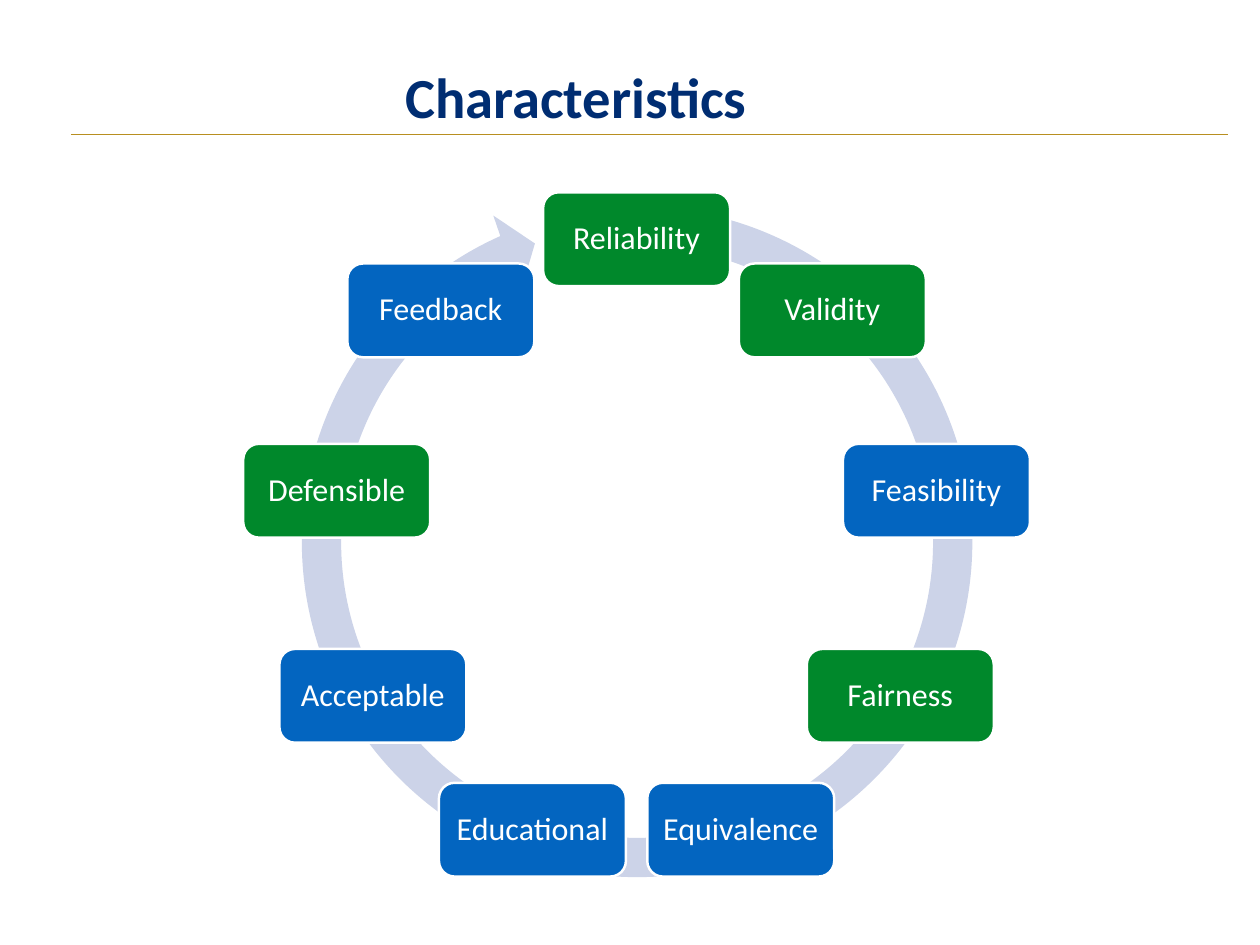
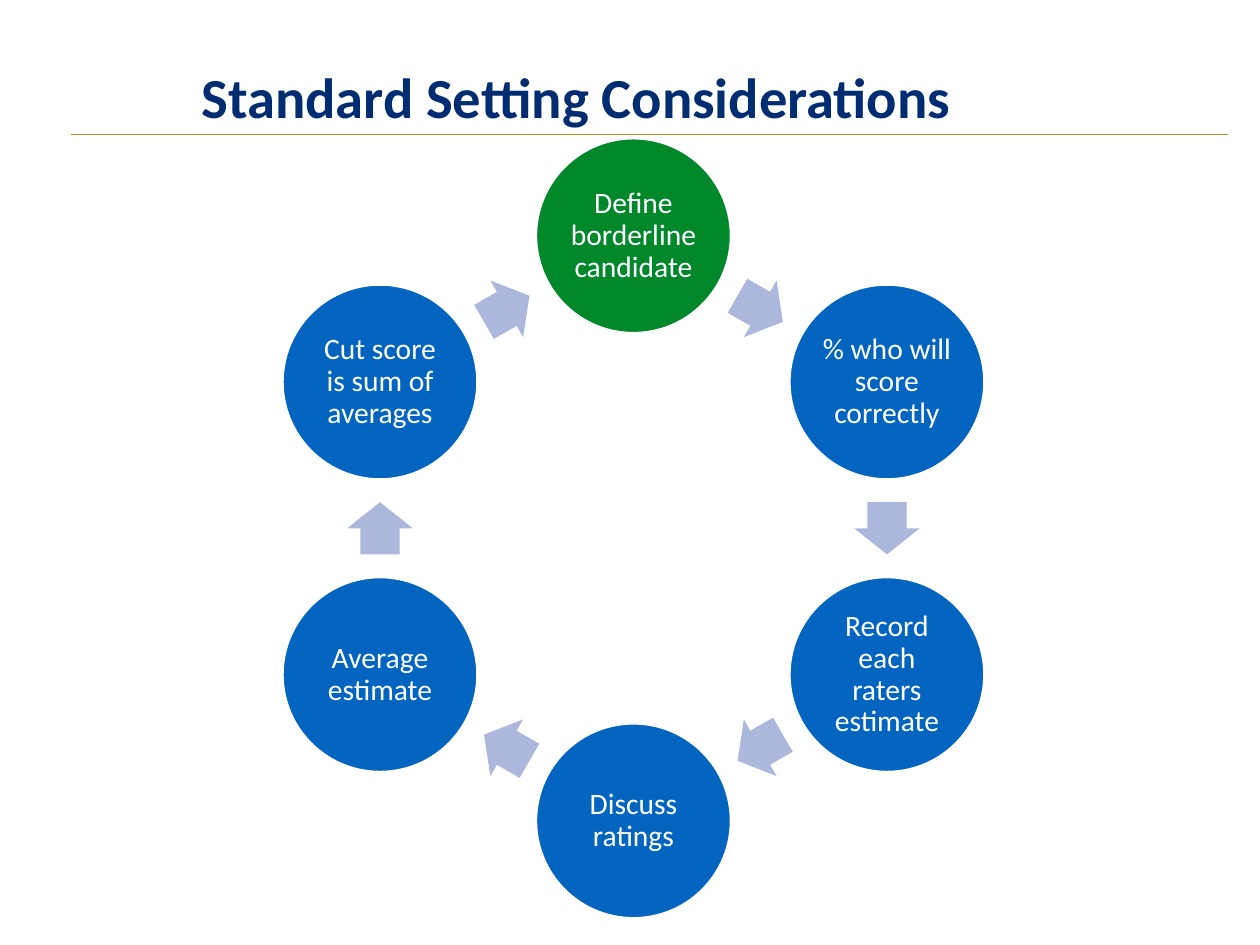
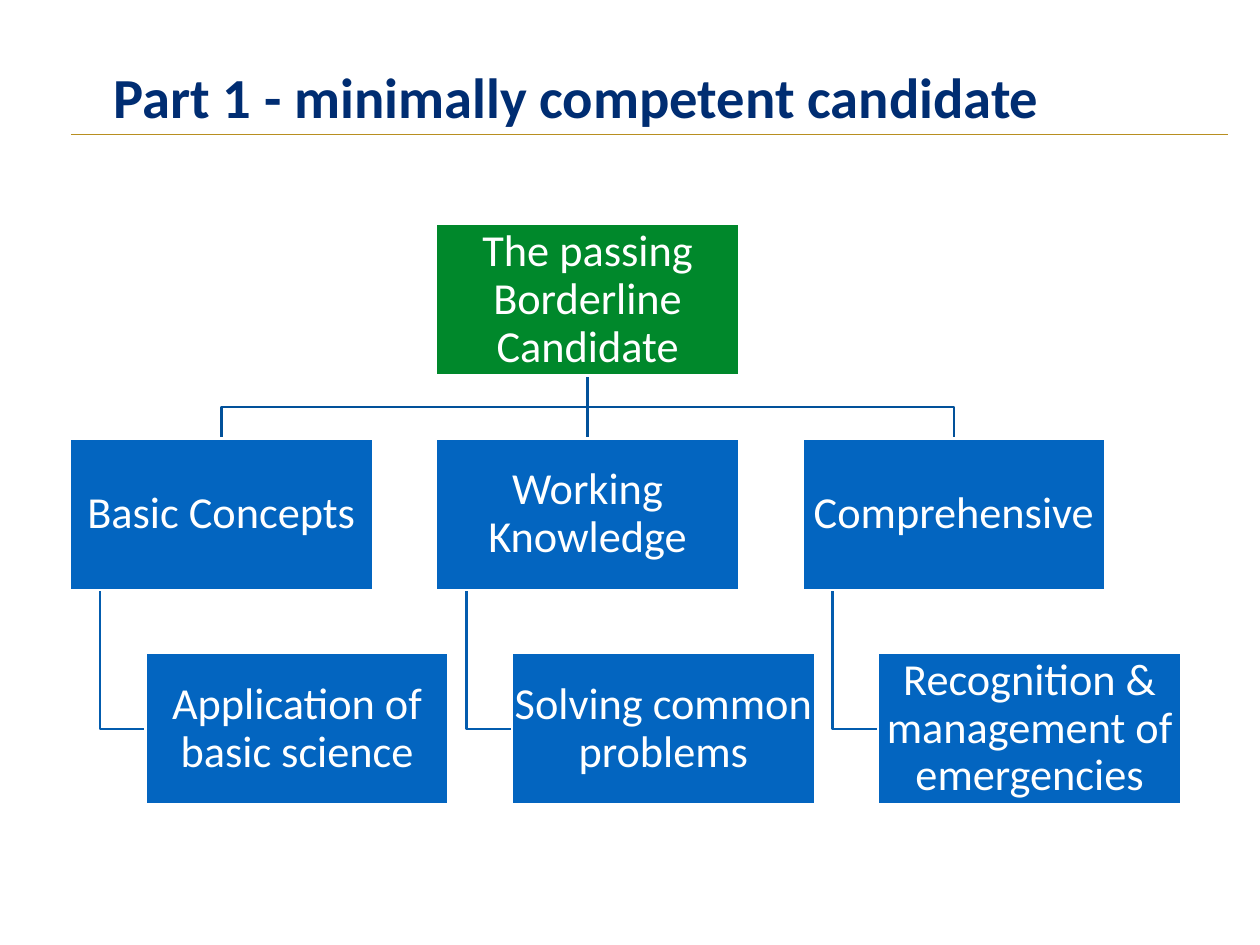
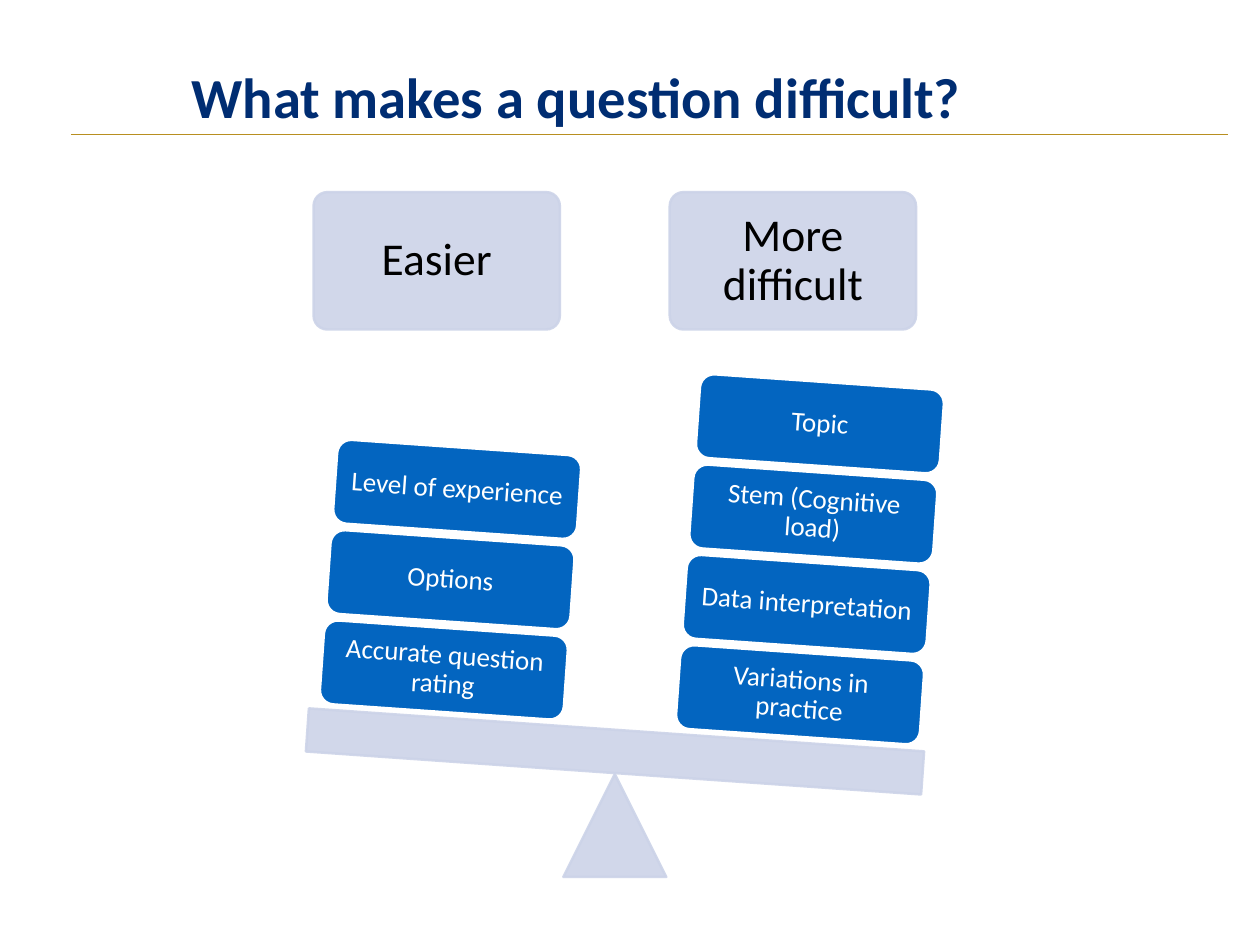
from math import cos, radians, sin

from lxml import etree
from pptx import Presentation
from pptx.dml.color import RGBColor
from pptx.enum.shapes import MSO_CONNECTOR, MSO_SHAPE
from pptx.enum.text import MSO_ANCHOR, PP_ALIGN
from pptx.oxml.ns import qn
from pptx.util import Cm, Pt

# Shared look
NAVY = RGBColor(0x00, 0x2D, 0x72)
GOLD = RGBColor(0xB8, 0x8F, 0x20)
GREEN = RGBColor(0x00, 0x88, 0x2B)
BLUE = RGBColor(0x03, 0x65, 0xC0)
BRANCH_BLUE = RGBColor(0x02, 0x51, 0x9A)
STEM_BLUE = RGBColor(0x03, 0x5C, 0xAE)
PALE = RGBColor(0xCC, 0xD3, 0xE8)
ARROW_BLUE = RGBColor(0xAB, 0xB8, 0xDC)
WHITE = RGBColor(0xFF, 0xFF, 0xFF)
BLACK = RGBColor(0x00, 0x00, 0x00)
FONT = "Calibri"

RECT = MSO_SHAPE.RECTANGLE
ROUND = MSO_SHAPE.ROUNDED_RECTANGLE
OVAL = MSO_SHAPE.OVAL
ARROW = MSO_SHAPE.RIGHT_ARROW
RING = MSO_SHAPE.CIRCULAR_ARROW
TRIANGLE = MSO_SHAPE.ISOSCELES_TRIANGLE
STRAIGHT = MSO_CONNECTOR.STRAIGHT
CENTER = PP_ALIGN.CENTER
MIDDLE = MSO_ANCHOR.MIDDLE
BOTTOM = MSO_ANCHOR.BOTTOM


def write(sp, text, size, color=WHITE, inset=0.0, spacing=0.9, anchor=MIDDLE, bold=False):
    """Fill a shape with one centred paragraph; inset is in cm."""
    tf = sp.text_frame
    frame = {"word_wrap": True, "vertical_anchor": anchor}
    for side in ("left", "right", "top", "bottom"):
        frame["margin_" + side] = Cm(inset)
    p = tf.paragraphs[0]
    r = p.add_run()
    formats = (
        (tf, frame),
        (p, {"alignment": CENTER, "line_spacing": spacing}),
        (r, {"text": text}),
        (r.font, {"name": FONT, "size": Pt(size), "bold": bold}),
    )
    for target, values in formats:
        for name, value in values.items():
            setattr(target, name, value)
    r.font.color.rgb = color


def add_shape(s, kind, x, y, w, h, fill, line=None, rotation=0):
    sp = s.shapes.add_shape(kind, Cm(x), Cm(y), Cm(w), Cm(h))
    sp.shadow.inherit = False
    sp.rotation = rotation
    sp.fill.solid()
    sp.fill.fore_color.rgb = fill
    if line is None:
        sp.line.fill.background()
    else:
        sp.line.color.rgb = line
        sp.line.width = Pt(2)
    return sp


def add_pale(s, kind, x, y, w, h, rotation=0):
    """Pale shape with fill and outline at 90 % opacity."""
    sp = add_shape(s, kind, x, y, w, h, PALE, PALE, rotation)
    for clr in sp.fill._xPr.iter(qn("a:srgbClr")):
        etree.SubElement(clr, qn("a:alpha")).set("val", "90000")
    return sp


def add_line(s, x1, y1, x2, y2, color, width):
    ln = s.shapes.add_connector(STRAIGHT, Cm(x1), Cm(y1), Cm(x2), Cm(y2))
    ln.line.color.rgb = color
    ln.line.width = Pt(width)
    etree.SubElement(ln._element.spPr, qn("a:effectLst"))


def add_bent_line(s, points, color):
    start, *rest = [(Cm(x), Cm(y)) for x, y in points]
    builder = s.shapes.build_freeform(*start)
    builder.add_line_segments(rest, close=False)
    sp = builder.convert_to_shape()
    sp.shadow.inherit = False
    sp.fill.background()
    sp.line.color.rgb = color
    sp.line.width = Pt(2)


def on_circle(cx, cy, radius, degrees):
    """Point on a circle, clockwise from the top."""
    a = radians(degrees)
    return cx + radius * sin(a), cy - radius * cos(a)


def add_slide(prs, title):
    s = prs.slides.add_slide(prs.slide_layouts[6])
    add_line(s, 2.03, 3.86, 35.2, 3.86, GOLD, 1)
    tb = s.shapes.add_textbox(Cm(1.98), Cm(-0.94), Cm(29.06), Cm(4.65))
    write(tb, title, 46, NAVY, spacing=0.8, anchor=BOTTOM, bold=True)
    return s


def characteristics(prs):
    s = add_slide(prs, "Characteristics")
    ring = add_shape(s, RING, 8.03, 5.31, 20.47, 20.47, PALE)
    # Thickness, head angle, end angle, start angle, head width
    turn = 0.6  # adjustment units per degree
    values = (5.5 / 100, 5.51 * turn, 245.6 * turn, 280.42 * turn, 5.8 / 100)
    for i, value in enumerate(values):
        ring.adjustments[i] = value

    w, h = 5.36, 2.69
    items = (
        ("Reliability", GREEN), ("Validity", GREEN), ("Feasibility", BLUE),
        ("Fairness", GREEN), ("Equivalence", BLUE), ("Educational", BLUE),
        ("Acceptable", BLUE), ("Defensible", GREEN), ("Feedback", BLUE),
    )
    for i, (text, fill) in enumerate(items):
        x, y = on_circle(18.25, 15.59, 8.73, i * 360 / len(items))
        sp = add_shape(s, ROUND, x - w / 2, y - h / 2, w, h, fill, WHITE)
        write(sp, text, 26, inset=0.28)


def considerations(prs):
    s = add_slide(prs, "Standard Setting Considerations")
    cx, cy, radius, d = 18.16, 15.15, 8.39, 5.59
    arrow_w, arrow_h = 1.5, 1.88
    steps = (
        "Define borderline candidate", "% who will score correctly",
        "Record each raters estimate", "Discuss ratings",
        "Average estimate", "Cut score is sum of averages",
    )
    step = 360 / len(steps)
    for i, text in enumerate(steps):
        x, y = on_circle(cx, cy, radius, i * step)
        fill = BLUE if i else GREEN
        sp = add_shape(s, OVAL, x - d / 2, y - d / 2, d, d, fill, WHITE)
        write(sp, text, 24, inset=0.08)
        # Arrow halfway to the next step
        angle = (i + 0.5) * step
        x, y = on_circle(cx, cy, radius * cos(radians(step / 2)), angle)
        sp = add_shape(s, ARROW, x - arrow_w / 2, y - arrow_h / 2,
                       arrow_w, arrow_h, ARROW_BLUE, rotation=angle)
        sp.adjustments[0] = 0.6


def candidate_tree(prs):
    s = add_slide(prs, "Part 1 - minimally competent candidate")
    w, h = 8.69, 4.34
    columns = [2 + 10.5 * i for i in range(3)]
    root_y, group_y, detail_y = [6.43 + 6.15 * i for i in range(3)]
    indent = w / 4
    root_x = columns[1]
    groups = (
        ("Basic Concepts", "Application of basic science"),
        ("Working Knowledge", "Solving common problems"),
        ("Comprehensive", "Recognition & management of emergencies"),
    )

    # Branches, behind the boxes
    trunk, bottom = root_x + w / 2, root_y + h
    bend = (bottom + group_y) / 2
    for x in columns:
        top = x + w / 2
        if x == root_x:
            add_line(s, trunk, bottom, top, group_y, BRANCH_BLUE, 2)
        else:
            add_bent_line(s, [(trunk, bottom), (trunk, bend), (top, bend), (top, group_y)],
                          BRANCH_BLUE)
        stem, middle = x + w / 10, detail_y + h / 2
        add_bent_line(s, [(stem, group_y + h), (stem, middle), (x + indent, middle)], STEM_BLUE)

    # Boxes
    boxes = [("The passing Borderline Candidate", root_x, root_y, GREEN)]
    for x, (group, detail) in zip(columns, groups):
        boxes += [(group, x, group_y, BLUE), (detail, x + indent, detail_y, BLUE)]
    for text, x, y, fill in boxes:
        write(add_shape(s, RECT, x, y, w, h, fill, WHITE), text, 36, inset=0.07)


def difficulty_balance(prs):
    s = add_slide(prs, "What makes a question difficult?")
    tilt = 4
    for text, x in (("Easier", 8.99), ("More difficult", 19.2)):
        plate = add_pale(s, ROUND, x, 5.51, 7.06, 3.94)
        plate.adjustments[0] = 0.1
        write(plate, text, 37, BLACK, inset=0.38)
    add_pale(s, TRIANGLE, 16.15, 22.2, 2.95, 2.95)
    add_pale(s, RECT, 8.79, 20.93, 17.68, 1.24, tilt)

    # Weights, stacked upwards from the beam
    stacks = (
        (19.43, 18.72, ("Variations in practice", "Data interpretation",
                        "Stem (Cognitive load)", "Topic")),
        (9.22, 18.01, ("Accurate question rating", "Options", "Level of experience")),
    )
    for x, y, weights in stacks:
        for i, text in enumerate(weights):
            sp = add_shape(s, ROUND, x + 0.19 * i, y - 2.59 * i, 7.01, 2.41, BLUE, WHITE, tilt)
            write(sp, text, 22, inset=0.23)


def main():
    prs = Presentation()
    prs.slide_width, prs.slide_height = Cm(36.12), Cm(27.1)
    for build in (characteristics, considerations, candidate_tree, difficulty_balance):
        build(prs)
    prs.save("out.pptx")


if __name__ == "__main__":
    main()
